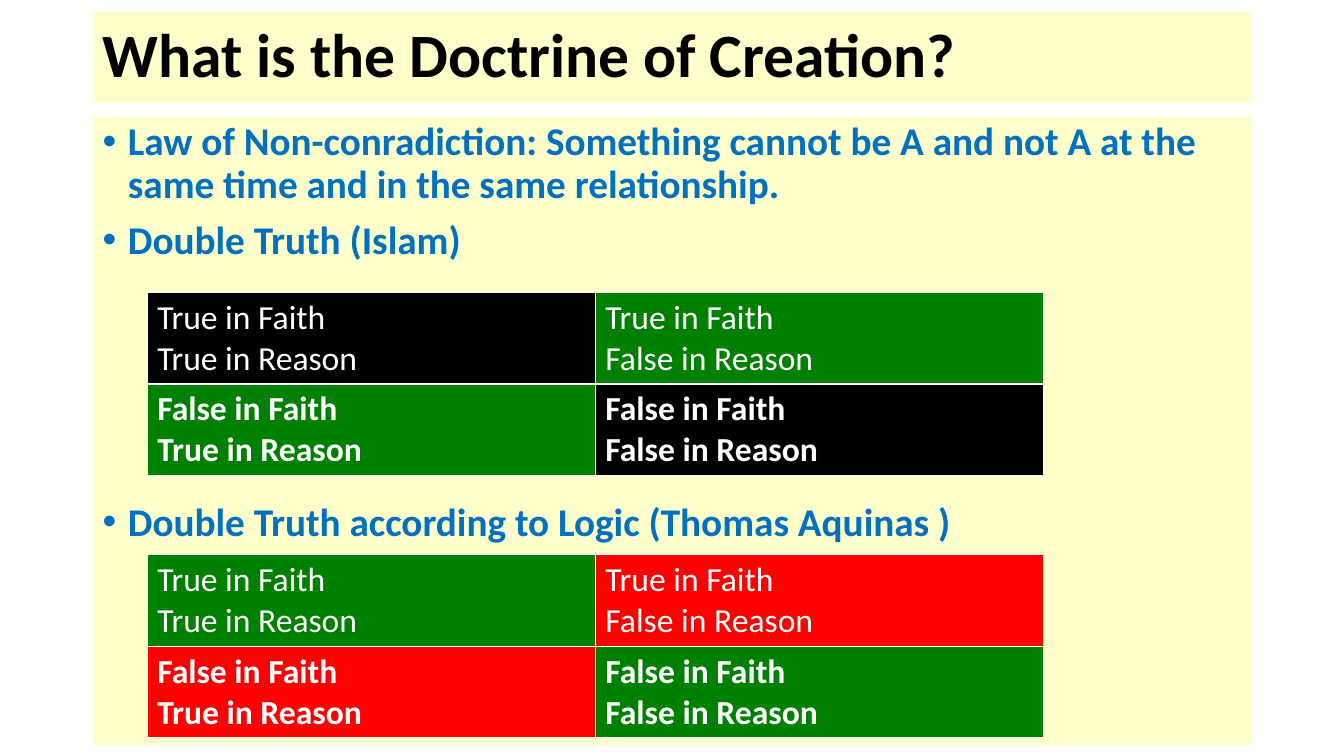
from dataclasses import dataclass

from lxml.etree import SubElement
from pptx import Presentation
from pptx.dml.color import RGBColor
from pptx.enum.text import MSO_ANCHOR
from pptx.oxml import parse_xml
from pptx.oxml.ns import nsdecls, qn
from pptx.util import Inches, Pt


@dataclass(frozen=True)
class Theme:
    font: str = "Calibri"
    panel: str = "FFFFCC"
    title: str = "000000"
    point: str = "0070C0"
    white: str = "FFFFFF"
    black: str = "000000"
    green: str = "008000"
    red: str = "FF0000"
    title_size: int = 44
    point_size: int = 28
    cell_size: int = 24


theme = Theme()


def add_run(paragraph, text, size, color, bold=True):
    run = paragraph.add_run()
    run.text = text
    run.font.name = theme.font
    run.font.size = Pt(size)
    run.font.bold = bold
    run.font.color.rgb = RGBColor.from_string(color)


def add_panel(top, height, anchor):
    panel = slide.shapes.add_textbox(Inches(0.92), Inches(top), Inches(11.5), Inches(height))
    panel.fill.solid()
    panel.fill.fore_color.rgb = RGBColor.from_string(theme.panel)
    panel.text_frame.word_wrap = True
    panel.text_frame.vertical_anchor = anchor
    return panel.text_frame


prs = Presentation()
prs.slide_width, prs.slide_height = Inches(13.33), Inches(7.5)
slide = prs.slides.add_slide(prs.slide_layouts[6])

# Title
heading = add_panel(0.12, 0.9, MSO_ANCHOR.MIDDLE).paragraphs[0]
heading.line_spacing = 0.9
add_run(heading, "What is the Doctrine of Creation?", theme.title_size, theme.title)

# Bulleted points; the last one leaves room above it for the first table
points = [
    ("Law of Non-conradiction: Something cannot be A and not A at the same time "
     "and in the same relationship.", 10),
    ("Double Truth (Islam)", 10),
    ("Double Truth according to Logic (Thomas Aquinas )", 171),
]
body = add_panel(1.16, 6.23, MSO_ANCHOR.TOP)
for index, (statement, space_before) in enumerate(points):
    point = body.add_paragraph() if index else body.paragraphs[0]
    point.line_spacing = 0.9
    point.space_before = Pt(space_before)
    properties = point._p.get_or_add_pPr()
    properties.set("marL", str(Inches(0.25)))
    properties.set("indent", str(Inches(-0.25)))
    SubElement(properties, qn("a:buFont")).set("typeface", "Arial")
    SubElement(properties, qn("a:buChar")).set("char", "•")
    add_run(point, statement, theme.point_size, theme.point)

# Truth tables: one colour where faith and reason agree, another where they differ
truth_tables = [
    (2.9, theme.black, theme.green),
    (5.5, theme.green, theme.red),
]
verdicts = ["True", "False"]
for top, agree, differ in truth_tables:
    grid = slide.shapes.add_table(2, 2, Inches(1.46), Inches(top), Inches(8.89), Inches(1.82)).table
    grid.first_row = grid.horz_banding = False
    for row, faith in enumerate(verdicts):
        for column, reason in enumerate(verdicts):
            cell = grid.cell(row, column)
            cell.fill.solid()
            cell.fill.fore_color.rgb = RGBColor.from_string(agree if faith == reason else differ)
            for position, side in enumerate(["lnL", "lnR", "lnT", "lnB"]):
                border = parse_xml(
                    f'<a:{side} {nsdecls("a")} w="{Pt(1)}"><a:solidFill>'
                    f'<a:srgbClr val="{theme.white}"/></a:solidFill></a:{side}>')
                cell._tc.get_or_add_tcPr().insert(position, border)
            lines = cell.text_frame
            add_run(lines.paragraphs[0], f"{faith} in Faith", theme.cell_size, theme.white, row == 1)
            add_run(lines.add_paragraph(), f"{reason} in Reason", theme.cell_size, theme.white, row == 1)

prs.save("out.pptx")
